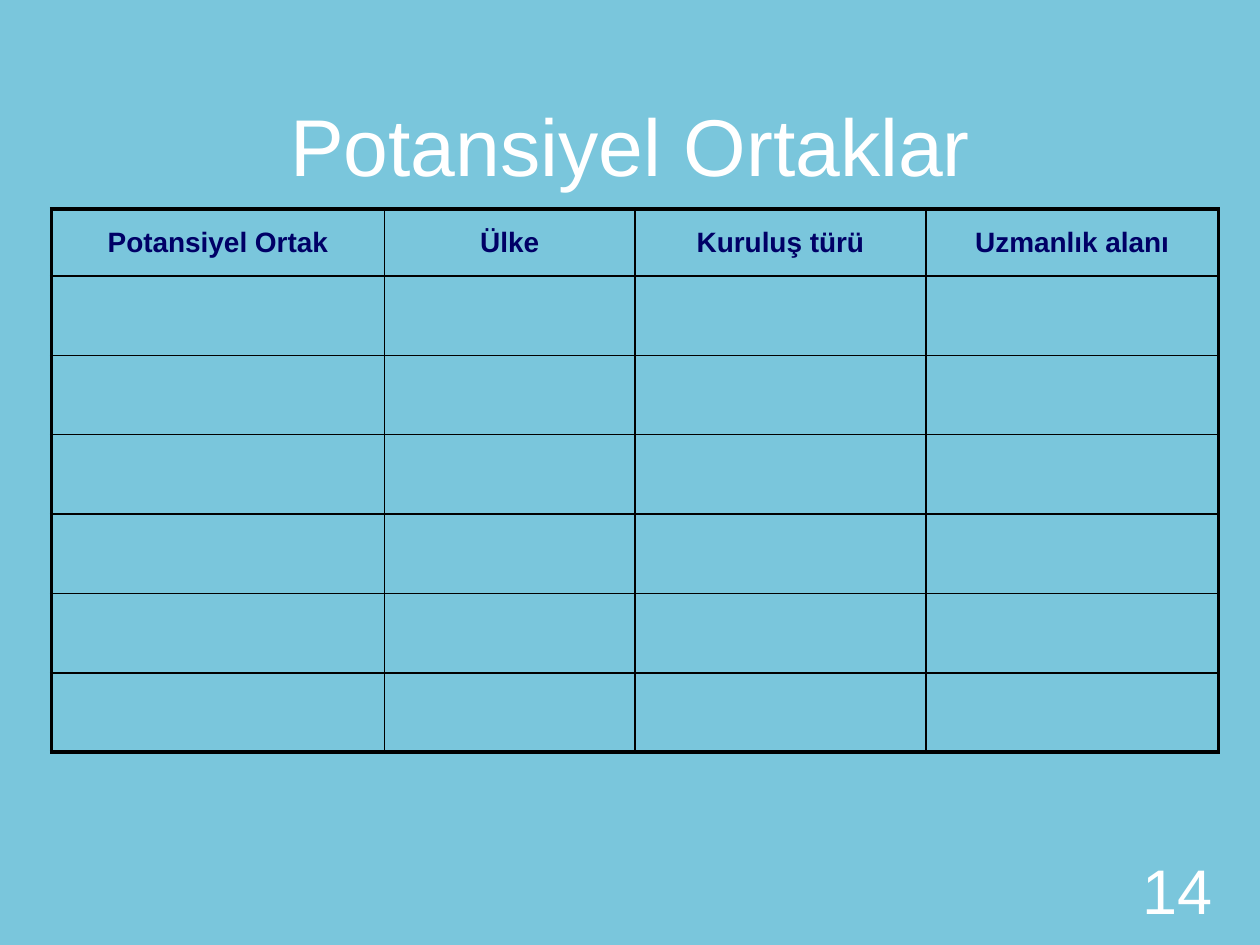
"""Build the slide with an empty table of potential partners."""
import dataclasses

import lxml.etree
import pptx
import pptx.dml.color
import pptx.enum.text
import pptx.oxml.ns
import pptx.util

Inches = pptx.util.Inches
Align = pptx.enum.text.PP_ALIGN
Anchor = pptx.enum.text.MSO_ANCHOR


@dataclasses.dataclass(frozen=True)
class Theme:
    font: str = "Arial"
    background: str = "7AC6DC"
    light: str = "FFFFFF"
    heading: str = "000066"
    border: str = "000000"
    title_size: float = 46
    number_size: float = 36
    heading_size: float = 16
    inner_border: float = 1
    outer_border: float = 2.25


def rgb(value):
    return pptx.dml.color.RGBColor.from_string(value)


def write_text(frame, text, *, font, size, color, align, bold=False):
    paragraph = frame.paragraphs[0]
    paragraph.alignment = align
    run = paragraph.add_run()
    run.text = text
    run.font.name = font
    run.font.size = pptx.util.Pt(size)
    run.font.bold = bold
    run.font.color.rgb = rgb(color)


class SlideBuilder:
    def __init__(self, slide, theme):
        self.slide = slide
        self.theme = theme
        fill = slide.background.fill
        fill.solid()
        fill.fore_color.rgb = rgb(theme.background)

    def text_box(self, text, left, top, width, height, *, anchor, size, align):
        shape = self.slide.shapes.add_textbox(
            Inches(left), Inches(top), Inches(width), Inches(height))
        frame = shape.text_frame
        frame.word_wrap = True
        frame.vertical_anchor = anchor
        write_text(frame, text, font=self.theme.font, size=size,
                   color=self.theme.light, align=align)

    def border(self, cell, side, width):
        properties = cell._tc.get_or_add_tcPr()
        name = pptx.oxml.ns.qn
        line = lxml.etree.SubElement(
            properties, name(f"a:ln{side}"), w=str(pptx.util.Pt(width)))
        fill = lxml.etree.SubElement(line, name("a:solidFill"))
        lxml.etree.SubElement(fill, name("a:srgbClr"), val=self.theme.border)

    def table(self, headings, left, top, column_widths, row_heights):
        theme = self.theme
        shape = self.slide.shapes.add_table(
            len(row_heights), len(column_widths), Inches(left), Inches(top),
            Inches(sum(column_widths)), Inches(sum(row_heights)))
        table = shape.table
        table.first_row = table.horz_banding = False
        for column, width in zip(table.columns, column_widths):
            column.width = Inches(width)
        last_row, last_column = len(row_heights) - 1, len(column_widths) - 1
        for row_index, row in enumerate(table.rows):
            row.height = Inches(row_heights[row_index])
            for column_index, cell in enumerate(row.cells):
                outer_sides = {
                    "L": column_index == 0, "R": column_index == last_column,
                    "T": row_index == 0, "B": row_index == last_row}
                for side, is_outer in outer_sides.items():
                    self.border(cell, side, theme.outer_border if is_outer
                                else theme.inner_border)
                cell.fill.background()
        for cell, heading in zip(table.rows[0].cells, headings):
            cell.vertical_anchor = Anchor.MIDDLE
            write_text(cell.text_frame, heading, font=theme.font,
                       size=theme.heading_size, color=theme.heading,
                       align=Align.CENTER, bold=True)


def main():
    presentation = pptx.Presentation()
    presentation.slide_width = Inches(10)
    presentation.slide_height = Inches(7.5)
    theme = Theme()
    slide = presentation.slides.add_slide(presentation.slide_layouts[6])
    builder = SlideBuilder(slide, theme)
    builder.text_box("Potansiyel Ortaklar", 0.6, 0.12, 8.8, 1.46,
                     anchor=Anchor.BOTTOM, size=theme.title_size,
                     align=Align.CENTER)
    builder.text_box("14", 8.64, 6.86, 1.08, 0.4, anchor=Anchor.MIDDLE,
                     size=theme.number_size, align=Align.RIGHT)
    builder.table(
        ["Potansiyel Ortak", "Ülke", "Kuruluş türü", "Uzmanlık alanı"],
        0.41, 1.66, [2.64, 1.99, 2.31, 2.32], [0.53] + [0.63] * 6)
    presentation.save("out.pptx")


if __name__ == "__main__":
    main()
